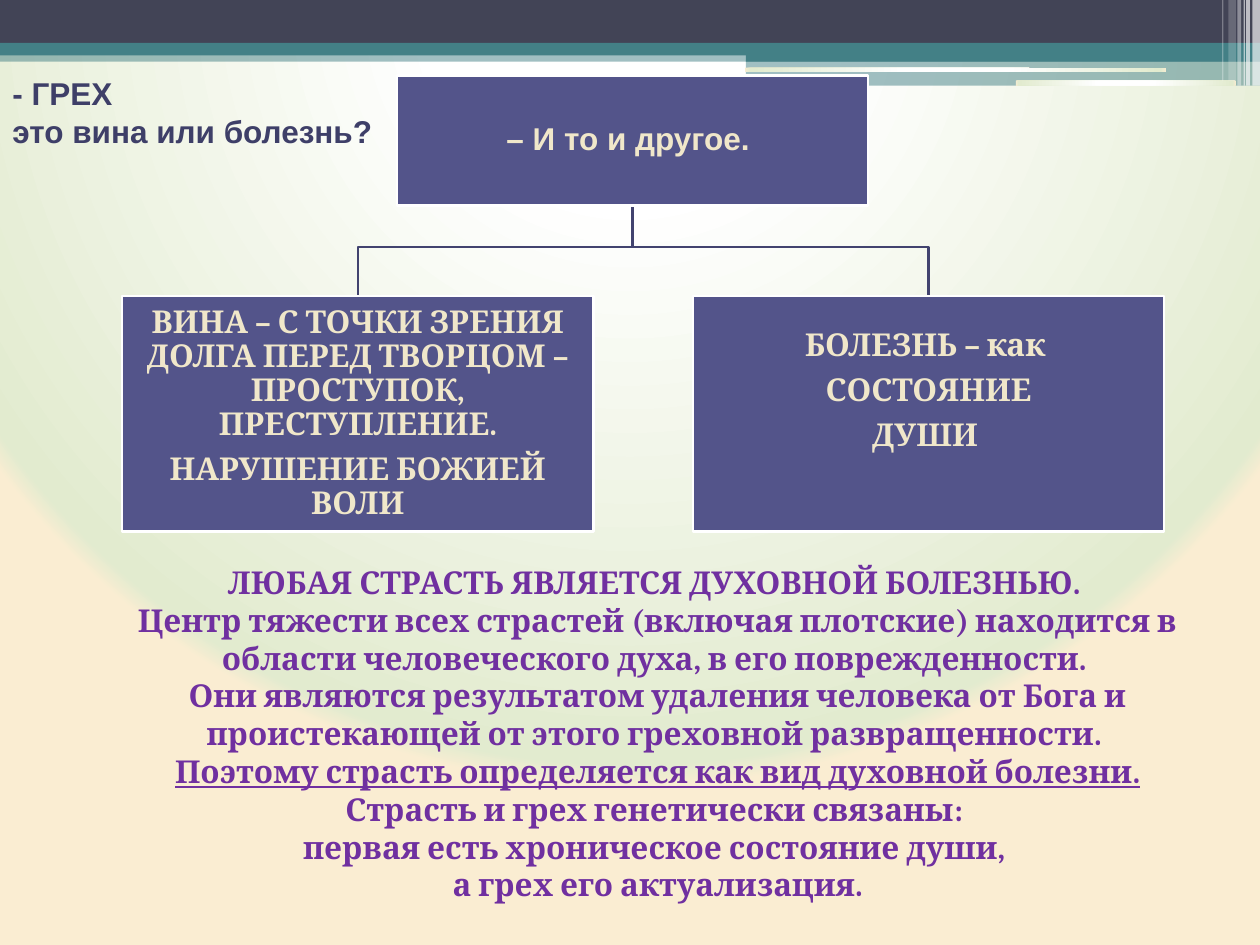
from dataclasses import dataclass
from lxml.etree import SubElement
from pptx import Presentation
from pptx.dml.color import RGBColor
from pptx.enum.shapes import MSO_SHAPE
from pptx.enum.text import MSO_ANCHOR, MSO_AUTO_SIZE, PP_ALIGN
from pptx.oxml.ns import qn
from pptx.util import Inches, Pt


@dataclass(frozen=True)
class Theme:
    dark: str = "424456"
    teal: str = "438086"
    white: str = "FFFFFF"
    box: str = "53548A"
    link: str = "42436F"
    cream: str = "F0E7CA"
    title: str = "3E3F68"
    violet: str = "7030A0"
    glow: tuple = ((0, "FFFFFF"), (25, "FFFFFF"), (97, "E2EBCF"), (100, "FAEDD2"))
    sans: str = "Arial"
    serif: str = "Cambria"
    size: float = 18
    gap: float = 6.3
    line: float = 1.5


THEME = Theme()


def color(code):
    return RGBColor.from_string(code)


def add_glow(fill, node):
    """Fill with the radial glow of the theme."""
    fill.solid()
    old = node.find(".//" + qn("a:solidFill"))
    grad = old.makeelement(qn("a:gradFill"), {"rotWithShape": "1"})
    stops = SubElement(grad, qn("a:gsLst"))
    for pos, code in THEME.glow:
        stop = SubElement(stops, qn("a:gs"), pos=str(pos * 1000))
        SubElement(stop, qn("a:srgbClr"), val=code)
    way = SubElement(grad, qn("a:path"), path="circle")
    SubElement(way, qn("a:fillToRect"), l="50000", t="-80000", r="50000", b="180000")
    old.getparent().replace(old, grad)


def add_rect(slide, box, code=None, alpha=100, kind=MSO_SHAPE.RECTANGLE):
    """Plain shape; without a colour it takes the glow."""
    shape = slide.shapes.add_shape(kind, *map(Inches, box))
    shape.shadow.inherit = False
    shape.line.fill.background()
    if code is None:
        add_glow(shape.fill, shape.element)
        return shape
    shape.fill.solid()
    shape.fill.fore_color.rgb = color(code)
    if alpha < 100:
        tint = shape.element.find(".//" + qn("a:srgbClr"))
        SubElement(tint, qn("a:alpha"), val=str(alpha * 1000))
    return shape


def add_text(frame, paras, font, code, align):
    """Each paragraph is a list of (text, underline) runs."""
    frame.word_wrap = True
    for i, runs in enumerate(paras):
        para = frame.paragraphs[0] if i == 0 else frame.add_paragraph()
        para.alignment = align
        for text, under in runs:
            run = para.add_run()
            run.text = text
            run.font.name = font
            run.font.size = Pt(THEME.size)
            run.font.bold = True
            run.font.underline = under
            run.font.color.rgb = color(code)


def plain(*lines):
    return [[(line, False)] for line in lines]


def add_note(slide, box, paras, font, code, align):
    note = slide.shapes.add_textbox(*map(Inches, box))
    add_text(note.text_frame, paras, font, code, align)
    note.text_frame.auto_size = MSO_AUTO_SIZE.SHAPE_TO_FIT_TEXT


def add_header(slide, box):
    left, top, width, _ = box
    right, mid = left + width, left + 5.92
    # Bands
    for x, y, high, code, alpha in (
        (left, 0.4, 0.09, THEME.teal, 50),
        (left, 0, 0.34, THEME.dark, 100),
        (left, 0.34, 0.1, THEME.teal, 100),
        (mid, 0.39, 0.1, THEME.teal, 100),
        (mid, 0.48, 0.2, THEME.teal, 50),
    ):
        add_rect(slide, (x, top + y, right - x, high), code, alpha)
    # Light strips
    for x, y, wide, high in ((5.91, 0.54, 3.35, 0.03), (8.06, 0.64, 1.75, 0.04)):
        add_rect(slide, (left + x, top + y, wide, high),
                 kind=MSO_SHAPE.ROUNDED_RECTANGLE)
    # Upright stripes, measured from the right edge
    for back, wide, high, alpha in (
        (0.06, 0.06, 0.68, 65), (0.11, 0.03, 0.68, 65), (0.13, 0.01, 0.68, 60),
        (0.18, 0.03, 0.68, 40), (0.25, 0.06, 0.64, 20), (0.3, 0.01, 0.64, 30),
    ):
        add_rect(slide, (right - back, top, wide, high), THEME.white, alpha)


def add_link(slide, start, end):
    """Bent line from a parent box down to a child box."""
    (x1, y1), (x2, y2) = start, end
    bend = y1 + 0.33
    path = slide.shapes.build_freeform(Inches(x1), Inches(y1))
    path.add_line_segments(
        [(Inches(x), Inches(y)) for x, y in ((x1, bend), (x2, bend), (x2, y2))],
        close=False)
    link = path.convert_to_shape()
    link.shadow.inherit = False
    link.fill.background()
    link.line.color.rgb = color(THEME.link)
    link.line.width = Pt(THEME.line)


def add_node(slide, box, paras, font, foot=0.01):
    node = add_rect(slide, box, THEME.box)
    node.line.color.rgb = color(THEME.white)
    node.line.width = Pt(THEME.line)
    frame = node.text_frame
    frame.vertical_anchor = MSO_ANCHOR.MIDDLE
    frame.margin_left = frame.margin_right = frame.margin_top = Inches(0.01)
    frame.margin_bottom = Inches(foot)
    add_text(frame, paras, font, THEME.cream, PP_ALIGN.CENTER)
    for para in frame.paragraphs:
        para.line_spacing = 0.9
        para.space_after = Pt(THEME.gap)


def add_tree(slide, box):
    left, top, width, height = box
    wide, high, low = 3.74, 1.03, 1.87
    root = left + 2.18
    row = top + height - low
    kids = (
        (left, plain("ВИНА – С ТОЧКИ ЗРЕНИЯ ДОЛГА ПЕРЕД ТВОРЦОМ – ПРОСТУПОК, ПРЕСТУПЛЕНИЕ.",
                     "НАРУШЕНИЕ БОЖИЕЙ ВОЛИ"), 0.01),
        (left + width - wide, plain("БОЛЕЗНЬ – как ", "СОСТОЯНИЕ", "ДУШИ "), 0.37),
    )
    for x, _, _ in reversed(kids):
        add_link(slide, (root + wide / 2, top + high), (x + wide / 2, row))
    add_node(slide, (root, top, wide, high), plain("– И то и другое. "), THEME.sans)
    for x, paras, foot in kids:
        add_node(slide, (x, row, wide, low), paras, THEME.serif, foot)


def main():
    deck = Presentation()
    deck.slide_width, deck.slide_height = Inches(10), Inches(7.5)
    slide = deck.slides.add_slide(deck.slide_layouts[6])
    add_glow(slide.background.fill, slide.element)
    add_header(slide, (0, 0, 10, 0.68))
    add_tree(slide, (0.97, 0.6, 8.27, 3.62))

    # Question
    add_note(slide, (0, 0.54, 5.65, 0.71),
             plain("- ГРЕХ", "это вина или болезнь?"),
             THEME.sans, THEME.title, PP_ALIGN.LEFT)

    # Conclusion
    paras = plain(
        "ЛЮБАЯ СТРАСТЬ ЯВЛЯЕТСЯ ДУХОВНОЙ БОЛЕЗНЬЮ. ",
        "Центр тяжести всех страстей (включая плотские) находится в области "
        "человеческого духа, в его поврежденности. ",
        "Они являются результатом удаления человека от Бога и проистекающей "
        "от этого греховной развращенности. ")
    paras.append([("Поэтому страсть определяется как вид духовной болезни. ", True),
                  ("Страсть и грех генетически связаны: ", False)])
    paras += plain("первая есть хроническое состояние души, ",
                   "а грех его актуализация.")
    add_note(slide, (0.75, 4.42, 8.94, 2.83), paras,
             THEME.serif, THEME.violet, PP_ALIGN.CENTER)
    deck.save("out.pptx")


if __name__ == "__main__":
    main()
